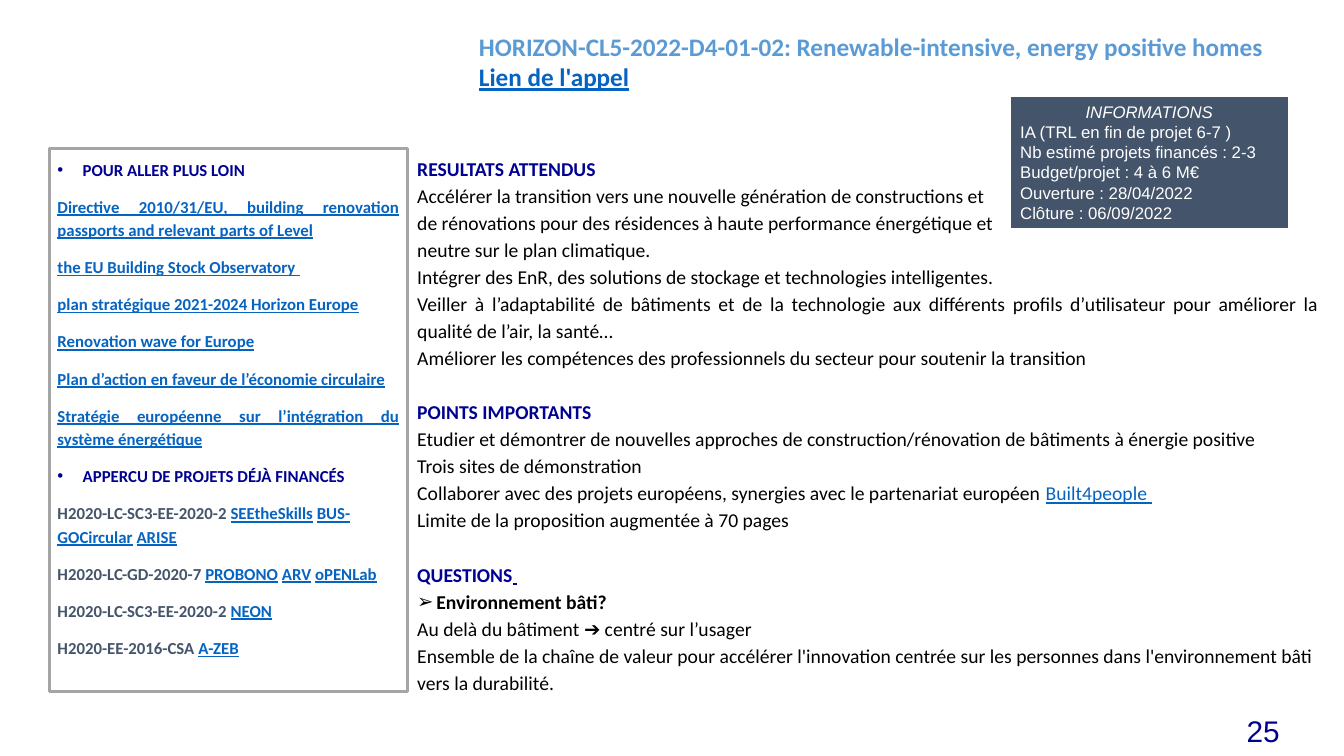
"""Build the slide that presents the Renewable-intensive, energy positive homes call."""
from lxml.etree import SubElement
from pptx import Presentation
from pptx.dml.color import RGBColor
from pptx.enum.shapes import MSO_SHAPE
from pptx.enum.text import MSO_ANCHOR, MSO_AUTO_SIZE, PP_ALIGN
from pptx.oxml.ns import qn
from pptx.util import Inches, Pt

NAVY = RGBColor(0x00, 0x00, 0x91)
SKY = RGBColor(0x5B, 0x9B, 0xD5)
LINK_BLUE = RGBColor(0x05, 0x63, 0xC1)
SLATE = RGBColor(0x44, 0x54, 0x6A)
GREY = RGBColor(0xA5, 0xA5, 0xA5)
BLACK = RGBColor(0x00, 0x00, 0x00)
WHITE = RGBColor(0xFF, 0xFF, 0xFF)

LEFT, TOP = 0.49, 1.47
SIDE_WIDTH = 3.55
MAIN_LEFT = LEFT + SIDE_WIDTH
BODY_HEIGHT = 5.39


def add_paragraph(frame, spans, size, font="Calibri", align=PP_ALIGN.LEFT,
                  spacing=1.0, before=0, bullet=None, indent=0):
    """Append a paragraph of (text, colour, flags) spans; flags are among b, i and u."""
    first = not frame.paragraphs[0].runs
    para = frame.paragraphs[0] if first else frame.add_paragraph()
    if bullet:
        properties = para._p.get_or_add_pPr()
        properties.set("marL", str(Inches(indent)))
        properties.set("indent", str(-Inches(indent)))
        SubElement(properties, qn("a:buFont"), typeface="Arial")
        SubElement(properties, qn("a:buChar"), char=bullet)
    para.alignment = align
    para.line_spacing = spacing
    para.space_before = Pt(0 if first else before)
    for text, colour, flags in spans:
        span = para.add_run()
        span.text = text
        span.font.name = font
        span.font.size = Pt(size)
        span.font.color.rgb = colour
        span.font.bold = "b" in flags
        span.font.italic = "i" in flags
        span.font.underline = "u" in flags


deck = Presentation()
deck.slide_width, deck.slide_height = Inches(13.33), Inches(7.5)
page = deck.slides.add_slide(deck.slide_layouts[5])

title = page.shapes.title
title.left, title.top, title.width, title.height = map(Inches, (4.65, 0.26, 8.41, 1.01))
title.text_frame.vertical_anchor = MSO_ANCHOR.TOP
title.text_frame.auto_size = MSO_AUTO_SIZE.NONE
title.text_frame.word_wrap = True
add_paragraph(title.text_frame, [
    ("HORIZON-CL5-2022-D4-01-02: Renewable-intensive, energy positive homes", SKY, "b")], 18)
add_paragraph(title.text_frame, [("Lien de l'appel", LINK_BLUE, "bu")], 18)

number = page.shapes.add_textbox(Inches(11.08), Inches(7), Inches(1.71), Inches(0.5))
number.text_frame.word_wrap = True
number.text_frame.vertical_anchor = MSO_ANCHOR.MIDDLE
add_paragraph(number.text_frame, [("25", NAVY, "")], 21.3, "Arial", PP_ALIGN.RIGHT)

information = page.shapes.add_shape(
    MSO_SHAPE.RECTANGLE, Inches(10.02), Inches(0.96), Inches(2.76), Inches(1.31))
information.fill.solid()
information.fill.fore_color.rgb = SLATE
information.line.color.rgb = WHITE
information.line.width = Pt(0.75)

sidebar = page.shapes.add_shape(
    MSO_SHAPE.RECTANGLE, Inches(LEFT), Inches(TOP), Inches(SIDE_WIDTH), Inches(BODY_HEIGHT))
sidebar.fill.background()
sidebar.line.color.rgb = GREY
sidebar.line.width = Pt(2)
for side in ("left", "top", "right", "bottom"):
    setattr(sidebar.text_frame, f"margin_{side}", Inches(0.08))

for box in (information, sidebar):
    box.shadow.inherit = False
    box.text_frame.word_wrap = True
    box.text_frame.vertical_anchor = MSO_ANCHOR.TOP

add_paragraph(information.text_frame, [("INFORMATIONS", WHITE, "i")], 12, "Arial", PP_ALIGN.CENTER)
for fact in (
    "IA (TRL en fin de projet 6-7 )",
    "Nb estimé projets financés : 2-3",
    "Budget/projet : 4 à 6 M€",
    "Ouverture : 28/04/2022",
    "Clôture : 06/09/2022",
):
    add_paragraph(information.text_frame, [(fact, WHITE, "")], 12, "Arial")

side_style = {"size": 12, "spacing": 1.15, "before": 10}
heading_style = {**side_style, "bullet": "•", "indent": 0.25}
add_paragraph(sidebar.text_frame, [("POUR ALLER PLUS LOIN", NAVY, "b")], **heading_style)
for reference in (
    "Directive 2010/31/EU, building renovation passports and relevant parts of Level",
    "the EU Building Stock Observatory ",
    "plan stratégique 2021-2024 Horizon Europe",
    "Renovation wave for Europe",
    "Plan d’action en faveur de l’économie circulaire",
    "Stratégie européenne sur l’intégration du système énergétique",
):
    add_paragraph(sidebar.text_frame, [(reference, LINK_BLUE, "bu")],
                  align=PP_ALIGN.JUSTIFY, **side_style)
add_paragraph(sidebar.text_frame, [("APPERCU DE PROJETS DÉJÀ FINANCÉS", NAVY, "b")], **heading_style)
for call, projects in (
    ("H2020-LC-SC3-EE-2020-2", ("SEEtheSkills", "BUS-GOCircular", "ARISE")),
    ("H2020-LC-GD-2020-7", ("PROBONO", "ARV", "oPENLab")),
    ("H2020-LC-SC3-EE-2020-2", ("NEON",)),
    ("H2020-EE-2016-CSA", ("A-ZEB",)),
):
    spans = [(call, SLATE, "b")]
    for project in projects:
        spans += [(" ", SLATE, "b"), (project, LINK_BLUE, "bu")]
    add_paragraph(sidebar.text_frame, spans, **side_style)

main = page.shapes.add_textbox(
    Inches(MAIN_LEFT), Inches(TOP), Inches(9.14), Inches(BODY_HEIGHT))
main.text_frame.word_wrap = True
main_style = {"size": 14, "spacing": 1.15}
section_style = {**main_style, "before": 19.5}

for heading, lines in (
    ("RESULTATS ATTENDUS", (
        "Accélérer la transition vers une nouvelle génération de constructions et",
        "de rénovations pour des résidences à haute performance énergétique et",
        "neutre sur le plan climatique.",
        "Intégrer des EnR, des solutions de stockage et technologies intelligentes.",
        "Veiller à l’adaptabilité de bâtiments et de la technologie aux différents profils "
        "d’utilisateur pour améliorer la qualité de l’air, la santé…",
        "Améliorer les compétences des professionnels du secteur pour soutenir la transition",
    )),
    ("POINTS IMPORTANTS", (
        "Etudier et démontrer de nouvelles approches de construction/rénovation de bâtiments "
        "à énergie positive",
        "Trois sites de démonstration",
        "Collaborer avec des projets européens, synergies avec le partenariat européen ",
        "Limite de la proposition augmentée à 70 pages",
    )),
):
    add_paragraph(main.text_frame, [(heading, NAVY, "b")], align=PP_ALIGN.JUSTIFY, **section_style)
    for line in lines:
        spans = [(line, BLACK, "")]
        if line.startswith("Collaborer"):
            spans.append(("Built4people ", LINK_BLUE, "u"))
        add_paragraph(main.text_frame, spans, align=PP_ALIGN.JUSTIFY, **main_style)

add_paragraph(main.text_frame, [("QUESTIONS", NAVY, "b"), (" ", NAVY, "bu")],
              align=PP_ALIGN.JUSTIFY, **section_style)
add_paragraph(main.text_frame, [("Environnement bâti?", BLACK, "b")],
              bullet="➢", indent=0.19, **main_style)
for answer in (
    "Au delà du bâtiment ➔ centré sur l’usager",
    "Ensemble de la chaîne de valeur pour accélérer l'innovation centrée sur les personnes "
    "dans l'environnement bâti vers la durabilité.",
):
    add_paragraph(main.text_frame, [(answer, BLACK, "")], **main_style)

deck.save("out.pptx")
